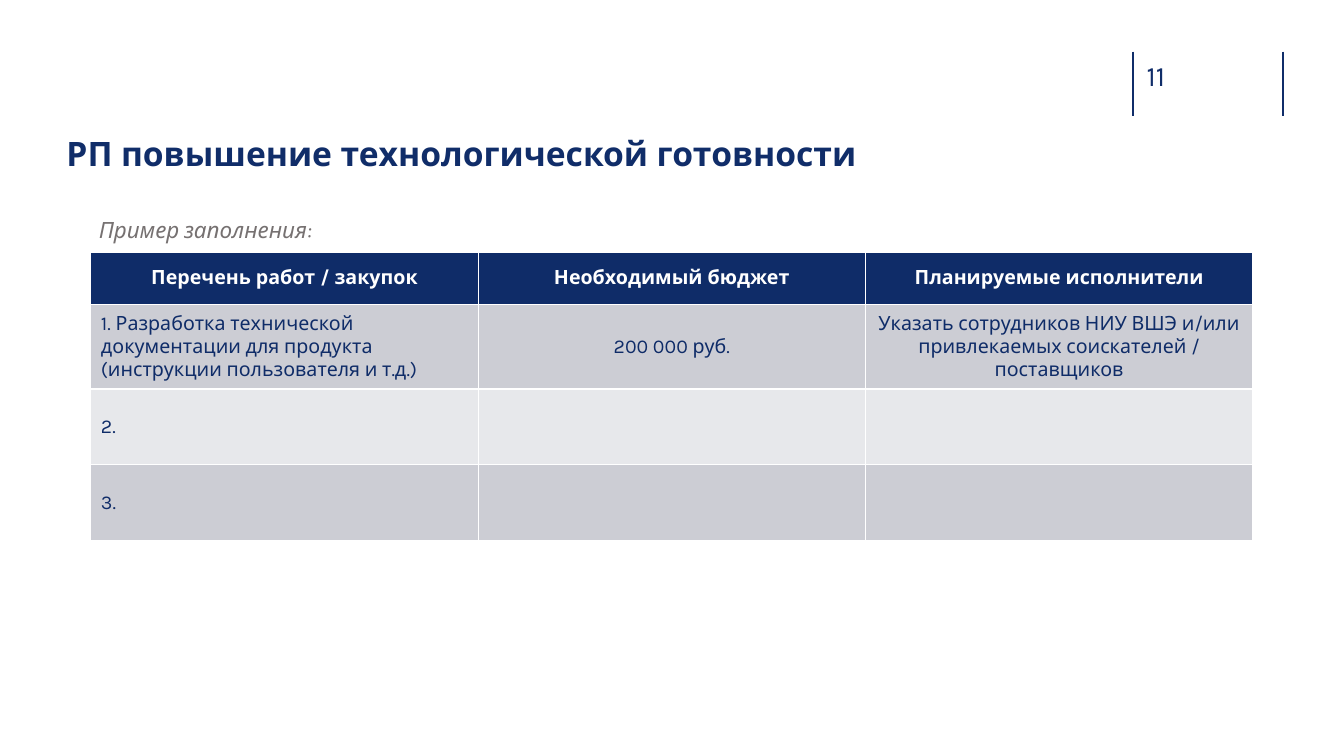
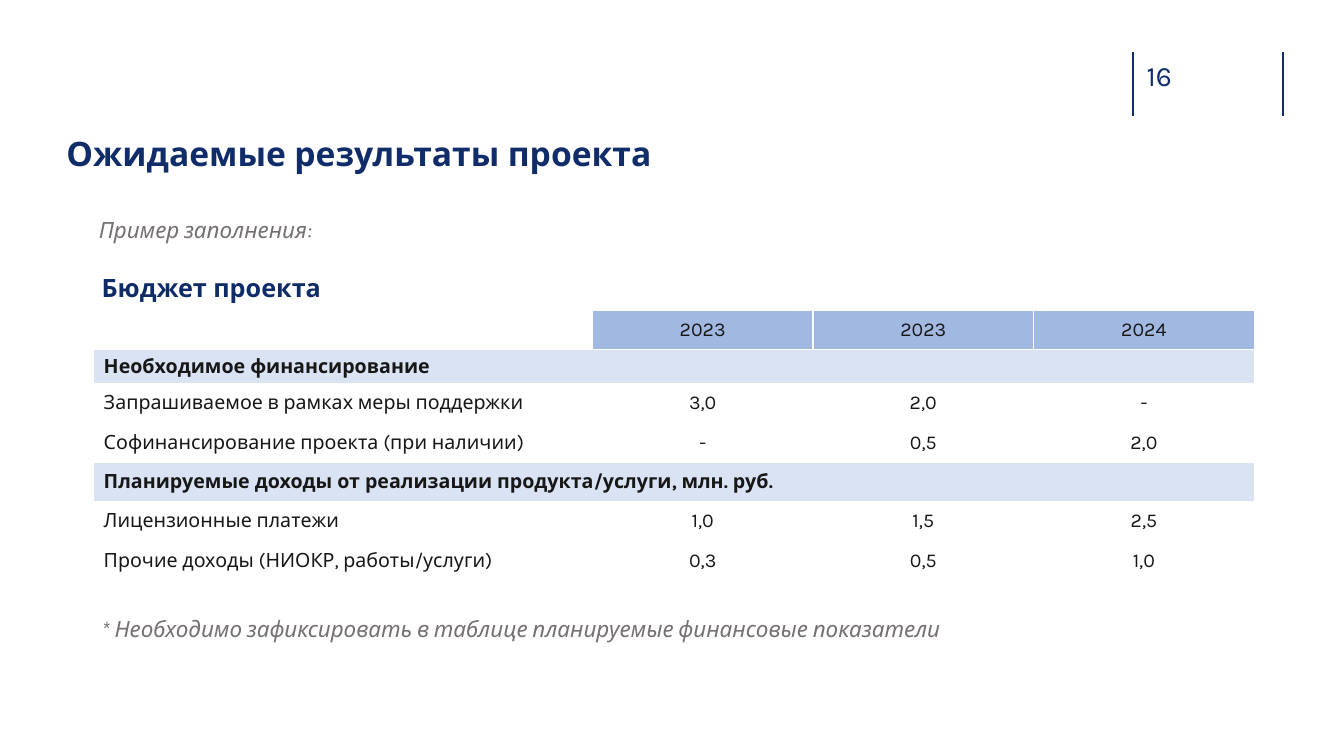
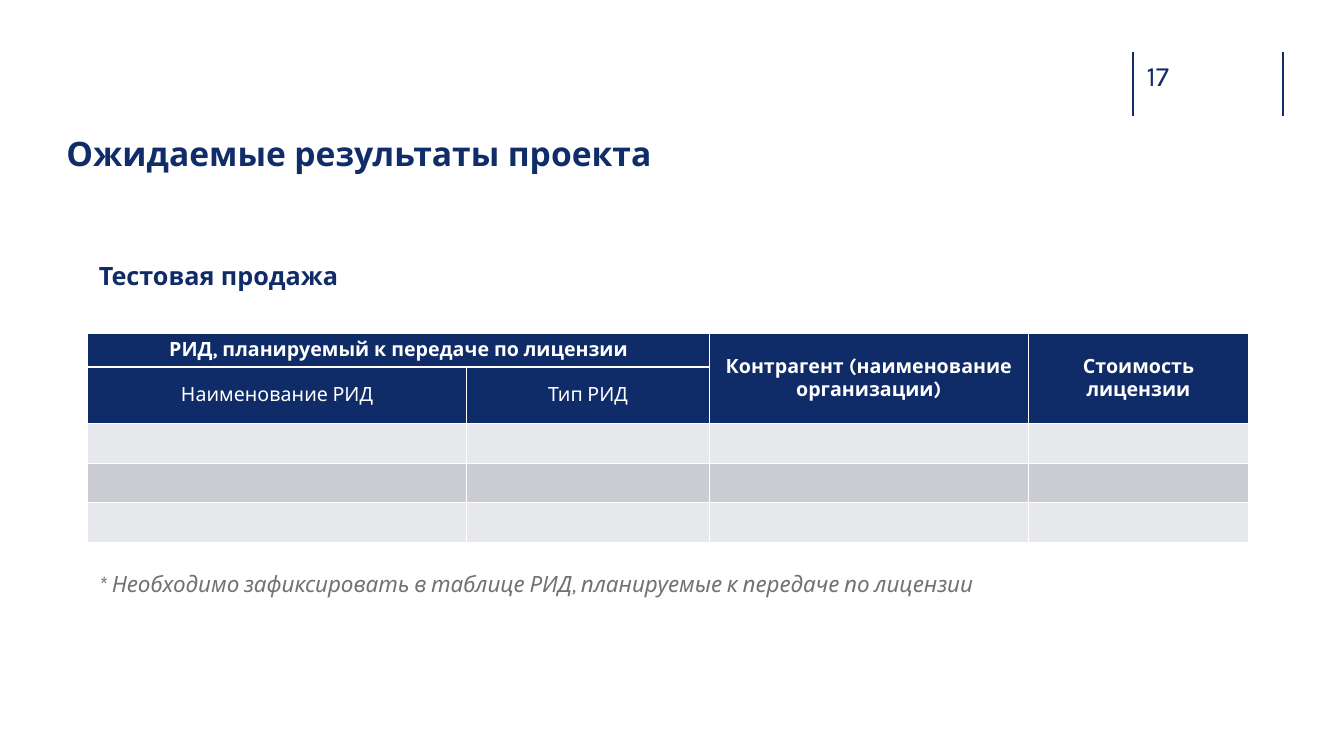
from dataclasses import dataclass

from lxml import etree
from pptx import Presentation
from pptx.dml.color import RGBColor
from pptx.enum.shapes import MSO_CONNECTOR
from pptx.enum.text import MSO_ANCHOR, MSO_AUTO_SIZE, PP_ALIGN
from pptx.oxml.ns import qn
from pptx.slide import Slide
from pptx.text.text import TextFrame
from pptx.util import Cm, Pt

STRAIGHT = MSO_CONNECTOR.STRAIGHT
TOP, MIDDLE = MSO_ANCHOR.TOP, MSO_ANCHOR.MIDDLE
LEFT, CENTER = PP_ALIGN.LEFT, PP_ALIGN.CENTER
NO_AUTOFIT = MSO_AUTO_SIZE.NONE

FONT = "Karla"
NAVY = "102D69"
TABLE_NAVY = "0F2C68"
WHITE = "FFFFFF"
GRAY = "767171"
INK = "181717"
BAND_DARK = "CCCDD4"
BAND_LIGHT = "E7E8EB"
YEAR_BLUE = "A1B8E1"
SECTION_BLUE = "DAE3F3"
CELL_SIZE = 14
TITLE_ONLY = 5
TEXT_WIDTH = 29.24


@dataclass(frozen=True)
class Box:
    left: float
    top: float
    width: float
    height: float


@dataclass(frozen=True)
class Style:
    size: int
    color: str
    bold: bool = False
    italic: bool = False


@dataclass(frozen=True)
class Cell:
    text: str = ""
    fill: str | None = None
    color: str = TABLE_NAVY
    bold: bool = False
    centered: bool = True
    rows: int = 1
    columns: int = 1


@dataclass(frozen=True)
class Grid:
    left: float
    top: float
    columns: list[float]
    rows: list[float]
    cells: list[list[Cell | None]]
    header: bool = True


TITLE = Style(24, NAVY, bold=True)
PAGE_NUMBER = Style(20, NAVY)
HEADING = Style(18, TABLE_NAVY, bold=True)
NOTE = Style(16, GRAY, italic=True)


def rgb(color: str) -> RGBColor:
    return RGBColor.from_string(color)


def write(frame: TextFrame, text: str, style: Style, align: PP_ALIGN = LEFT) -> None:
    paragraph = frame.paragraphs[0]
    paragraph.alignment = align
    run = paragraph.add_run()
    run.text = text
    run.font.name = FONT
    run.font.size = Pt(style.size)
    run.font.bold = style.bold
    run.font.italic = style.italic
    run.font.color.rgb = rgb(style.color)


def add_text(slide: Slide, box: Box, text: str, style: Style,
             margin: float = 0.2, anchor: MSO_ANCHOR = MIDDLE) -> None:
    shape = slide.shapes.add_textbox(Cm(box.left), Cm(box.top), Cm(box.width), Cm(box.height))
    frame = shape.text_frame
    frame.word_wrap = True
    frame.auto_size = NO_AUTOFIT
    frame.vertical_anchor = anchor
    frame.margin_left = frame.margin_right = Cm(margin)
    frame.margin_top = frame.margin_bottom = Cm(margin)
    write(frame, text, style)


def add_note(slide: Slide, left: float, top: float, text: str) -> None:
    add_text(slide, Box(left, top, TEXT_WIDTH, 1.09), text, NOTE)


def add_heading(slide: Slide, left: float, top: float, text: str) -> None:
    add_text(slide, Box(left, top, TEXT_WIDTH, 1.17), text, HEADING)


def add_rule(slide: Slide, left: float) -> None:
    rule = slide.shapes.add_connector(STRAIGHT, Cm(left), Cm(1.3), Cm(left), Cm(2.92))
    rule.line.color.rgb = rgb(NAVY)
    rule.line.width = Pt(1)
    etree.SubElement(rule._element.spPr, qn("a:effectLst"))


def add_page(presentation: Presentation, title: str, number: int) -> Slide:
    slide = presentation.slides.add_slide(presentation.slide_layouts[TITLE_ONLY])
    for left in (28.55, 32.33):
        add_rule(slide, left)
    add_text(slide, Box(28.9, 1.47, 1.85, 0.86), str(number), PAGE_NUMBER, 0, TOP)
    shape = slide.shapes.title
    shape.left, shape.top = Cm(1.42), Cm(3.23)
    shape.width, shape.height = Cm(28.14), Cm(1.27)
    frame = shape.text_frame
    frame.auto_size = NO_AUTOFIT
    frame.vertical_anchor = TOP
    write(frame, title, TITLE)
    return slide


def add_grid(slide: Slide, grid: Grid) -> None:
    table = slide.shapes.add_table(
        len(grid.rows), len(grid.columns), Cm(grid.left), Cm(grid.top),
        Cm(sum(grid.columns)), Cm(sum(grid.rows))).table
    table.first_row = grid.header
    table.horz_banding = False
    for column, width in zip(table.columns, grid.columns):
        column.width = Cm(width)
    for row, height in zip(table.rows, grid.rows):
        row.height = Cm(height)
    for top, row_cells in enumerate(grid.cells):
        for left, cell in enumerate(row_cells):
            if cell is None:
                continue
            target = table.cell(top, left)
            if cell.rows > 1 or cell.columns > 1:
                target.merge(table.cell(top + cell.rows - 1, left + cell.columns - 1))
            target.vertical_anchor = MIDDLE
            if cell.fill:
                target.fill.solid()
                target.fill.fore_color.rgb = rgb(cell.fill)
            else:
                target.fill.background()
            if cell.text:
                write(target.text_frame, cell.text, Style(CELL_SIZE, cell.color, cell.bold),
                      CENTER if cell.centered else LEFT)
            else:
                paragraph = target.text_frame.paragraphs[0]
                etree.SubElement(paragraph._p, qn("a:endParaRPr"), sz=str(CELL_SIZE * 100))


def header(text: str, bold: bool = True, rows: int = 1, columns: int = 1) -> Cell:
    return Cell(text, TABLE_NAVY, WHITE, bold, rows=rows, columns=columns)


def work_row(fill: str, work: str, budget: str = "", performers: str = "") -> list[Cell | None]:
    return [Cell(work, fill, centered=False), Cell(budget, fill), Cell(performers, fill)]


def section_row(text: str) -> list[Cell | None]:
    return [Cell(text, SECTION_BLUE, INK, True, False, columns=4), None, None, None]


def money_row(label: str, *values: str) -> list[Cell | None]:
    return [Cell(label, color=INK, centered=False), *(Cell(value, color=INK) for value in values)]


def build_works(presentation: Presentation) -> None:
    slide = add_page(presentation, "РП повышение технологической готовности", 11)
    add_note(slide, 2.29, 5.23, "Пример заполнения:")
    titles = ("Перечень работ / закупок", "Необходимый бюджет", "Планируемые исполнители")
    add_grid(slide, Grid(2.29, 6.35, [9.76] * 3, [1.32, 2.13, 1.91, 1.91], [
        [header(title) for title in titles],
        work_row(BAND_DARK,
                 "1. Разработка технической документации для продукта "
                 "(инструкции пользователя и т.д.)",
                 "200 000 руб.",
                 "Указать сотрудников НИУ ВШЭ и/или привлекаемых соискателей / поставщиков"),
        work_row(BAND_LIGHT, "2."),
        work_row(BAND_DARK, "3."),
    ]))


def build_budget(presentation: Presentation) -> None:
    slide = add_page(presentation, "Ожидаемые результаты проекта", 16)
    add_note(slide, 2.29, 5.23, "Пример заполнения:")
    add_heading(slide, 2.36, 6.65, "Бюджет проекта")
    years = ("2023", "2023", "2024")
    add_grid(slide, Grid(2.36, 7.82, [12.57] + [5.56] * 3, [0.99, 0.86] + [0.99] * 5, [
        [Cell(), *(Cell(year, YEAR_BLUE, INK) for year in years)],
        section_row("Необходимое финансирование"),
        money_row("Запрашиваемое в рамках меры поддержки", "3,0", "2,0", "-"),
        money_row("Софинансирование проекта (при наличии)", "-", "0,5", "2,0"),
        section_row("Планируемые доходы от реализации продукта/услуги, млн. руб."),
        money_row("Лицензионные платежи", "1,0", "1,5", "2,5"),
        money_row("Прочие доходы (НИОКР, работы/услуги)", "0,3", "0,5", "1,0"),
    ], header=False))
    add_note(slide, 2.36, 15.29,
             "* Необходимо зафиксировать в таблице планируемые финансовые показатели")


def build_sale(presentation: Presentation) -> None:
    slide = add_page(presentation, "Ожидаемые результаты проекта", 17)
    add_heading(slide, 2.29, 6.35, "Тестовая продажа")
    add_grid(slide, Grid(2.21, 8.41, [9.55, 6.12, 8.03, 5.56], [0.84, 1.42] + [1] * 3, [
        [header("РИД, планируемый к передаче по лицензии", columns=2), None,
         header("Контрагент (наименование организации)", rows=2),
         header("Стоимость лицензии", rows=2)],
        [header("Наименование РИД", bold=False), header("Тип РИД", bold=False), None, None],
        *([Cell(fill=fill)] * 4 for fill in (BAND_LIGHT, BAND_DARK, BAND_LIGHT)),
    ]))
    add_note(slide, 2.29, 14.15,
             "* Необходимо зафиксировать в таблице РИД, планируемые к передаче по лицензии")


def main() -> None:
    presentation = Presentation()
    presentation.slide_width, presentation.slide_height = Cm(33.87), Cm(19.05)
    build_works(presentation)
    build_budget(presentation)
    build_sale(presentation)
    presentation.save("out.pptx")


if __name__ == "__main__":
    main()
